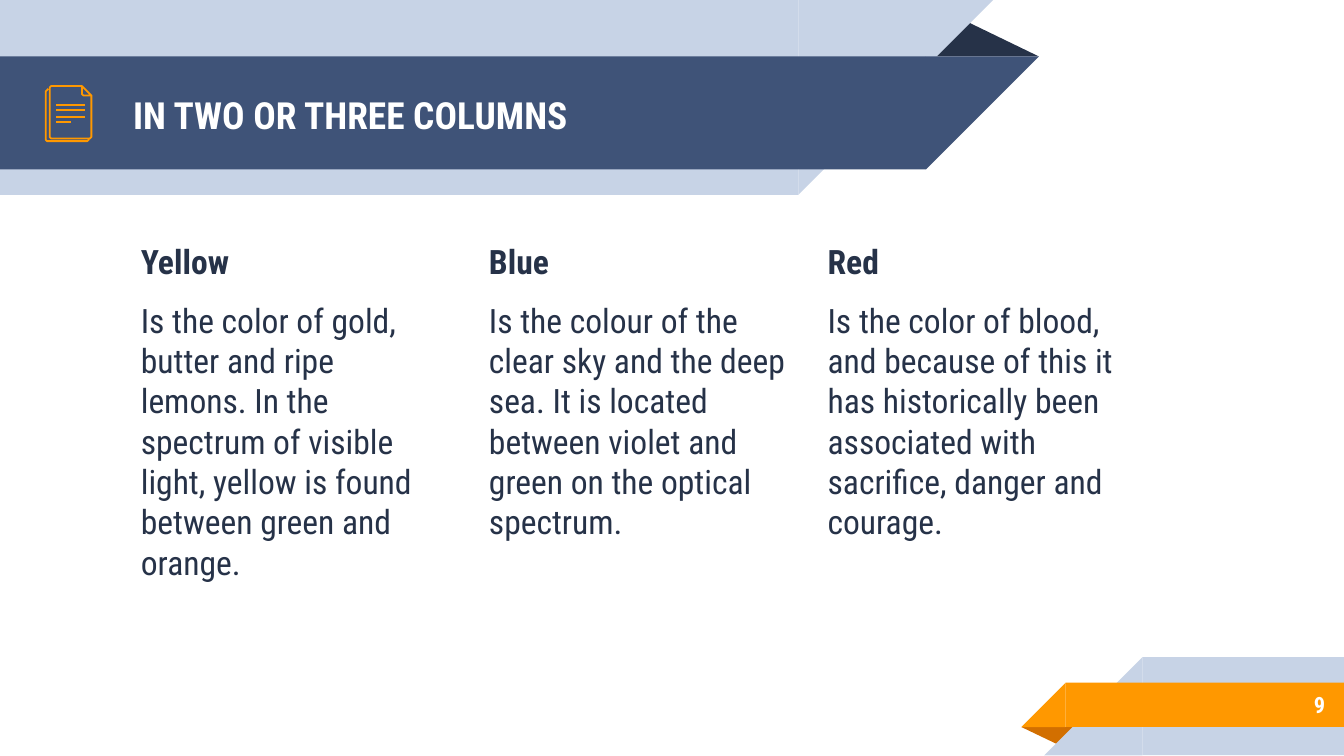
from lxml import etree
from pptx import Presentation
from pptx import util as u
from pptx.dml.color import RGBColor
from pptx.enum import shapes, text
from pptx.oxml.ns import qn

NAVY, BLUE, PALE, ORANGE, RUST, WHITE = (
    "263248", "3F5378", "C7D3E6", "FF9800", "D26F00", "FFFFFF")
FONT = "Roboto Condensed"
TITLE = "IN TWO OR THREE COLUMNS"
PAGE_NUMBER = "9"
COLUMNS = [
    (0.95, "Yellow", "Is the color of gold, butter and ripe lemons. In the spectrum of "
                     "visible light, yellow is found between green and orange."),
    (3.54, "Blue", "Is the colour of the clear sky and the deep sea. It is located "
                   "between violet and green on the optical spectrum."),
    (6.06, "Red", "Is the color of blood, and because of this it has historically been "
                  "associated with sacrifice, danger and courage."),
]
TOP_FOLD = (6.88, 0.14, 0.85, 0.28, NAVY, 0)
TOP_RIBBONS = [(5.94, 0, 1.45, PALE), (6.89, 0.42, 0.84, BLUE)]
BOTTOM_FOLD = (7.6, 5.41, 0.43, 0.14, RUST, 180)
BOTTOM_RIBBONS = [(8.5, 4.89, 0.73, PALE), (7.93, 5.08, 0.33, ORANGE)]
ICON_UNIT = u.Inches(0.01)
PAGE_OUTLINES = [
    ([(66, 103), (66, 104), (65, 105), (64, 105), (36, 105), (35, 105), (34, 104),
      (34, 103), (34, 68), (35, 67), (36, 66)], False),
    ([(68, 71), (68, 101), (68, 102), (67, 103), (66, 103), (38, 103), (37, 102),
      (37, 101), (37, 66), (37, 65), (38, 64), (61, 64)], False),
    ([(61, 70), (61, 64), (68, 71), (63, 71), (62, 71)], True),
]
WRITING_LINES = [(0.53, 0.91), (0.63, 0.87), (0.63, 0.82), (0.63, 0.78)]

deck = Presentation()
deck.slide_width = u.Inches(10)
deck.slide_height = deck.slide_width * 9 // 16
slide = deck.slides.add_slide(deck.slide_layouts[5])


def color(hex_value):
    return RGBColor.from_string(hex_value)


def apply(target, values):
    for name, value in values.items():
        setattr(target, name, value)


def add_part(preset, left, top, width, height, fill, rotation=0):
    part = slide.shapes.add_shape(preset, *map(u.Inches, (left, top, width, height)))
    part.fill.solid()
    part.fill.fore_color.rgb = color(fill)
    part.line.fill.background()
    part.shadow.inherit = False
    part.rotation = rotation
    return part


def add_fold(*fold):
    part = add_part(shapes.MSO_SHAPE.ISOSCELES_TRIANGLE, *fold)
    part.adjustments[0] = 0.32


def add_ribbon(start, end, tip, top, height, fill, rotation):
    add_part(shapes.MSO_SHAPE.RECTANGLE, start, top, end - start, height, fill)
    add_part(shapes.MSO_SHAPE.RIGHT_TRIANGLE, tip, top, height, height, fill, rotation)


def write(box, paragraphs, anchor):
    frame = box.text_frame
    margins = dict.fromkeys(
        ("margin_left", "margin_top", "margin_right", "margin_bottom"), u.Inches(0.1))
    apply(frame, {"word_wrap": True, "auto_size": text.MSO_AUTO_SIZE.NONE,
                  "vertical_anchor": anchor, **margins})
    for index, (words, size, fill, bold, layout) in enumerate(paragraphs):
        paragraph = frame.add_paragraph() if index else frame.paragraphs[0]
        apply(paragraph, {"alignment": text.PP_ALIGN.LEFT, **layout})
        run = paragraph.add_run()
        run.text = words
        apply(run.font, {"name": FONT, "size": u.Pt(size), "bold": bold})
        run.font.color.rgb = color(fill)


def stroke(line):
    line.color.rgb = color(ORANGE)
    line.width = u.Pt(0.96)


add_fold(*TOP_FOLD)
for corner, top, height, fill in TOP_RIBBONS:
    add_ribbon(0, corner, corner, top, height, fill, 90)
add_fold(*BOTTOM_FOLD)
for corner, top, height, fill in BOTTOM_RIBBONS:
    add_ribbon(corner, 10, corner - height, top, height, fill, 270)

title = slide.shapes.title
title.element.getparent().append(title.element)
apply(title, dict(zip(("left", "top", "width", "height"),
                      map(u.Inches, (0.89, 0.43, 5.75, 0.84)))))
write(title, [(TITLE, 20, WHITE, True, {})], text.MSO_ANCHOR.MIDDLE)

for left, heading, body in COLUMNS:
    column = slide.shapes.add_textbox(*map(u.Inches, (left, 1.69, 2.46, 2.96)))
    write(column, [
        (heading, 18, NAVY, True, {"space_before": u.Pt(6)}),
        (body, 18, NAVY, False, {"space_before": u.Pt(10), "space_after": u.Pt(10)}),
    ], text.MSO_ANCHOR.TOP)

number = slide.shapes.add_textbox(*map(u.Inches, (8.33, 5.07, 1.63, 0.35)))
write(number, [(PAGE_NUMBER, 12, WHITE, True, {"alignment": text.PP_ALIGN.RIGHT})],
      text.MSO_ANCHOR.MIDDLE)

for points, closed in PAGE_OUTLINES:
    builder = slide.shapes.build_freeform(*points[0], scale=ICON_UNIT)
    builder.add_line_segments(points[1:], close=closed)
    outline = builder.convert_to_shape()
    outline.fill.background()
    outline.shadow.inherit = False
    stroke(outline.line)

for right, level in WRITING_LINES:
    writing = slide.shapes.add_connector(
        shapes.MSO_CONNECTOR.STRAIGHT, *map(u.Inches, (right, level, 0.42, level)))
    stroke(writing.line)
    etree.SubElement(writing.element.spPr, qn("a:effectLst"))

deck.save("out.pptx")
